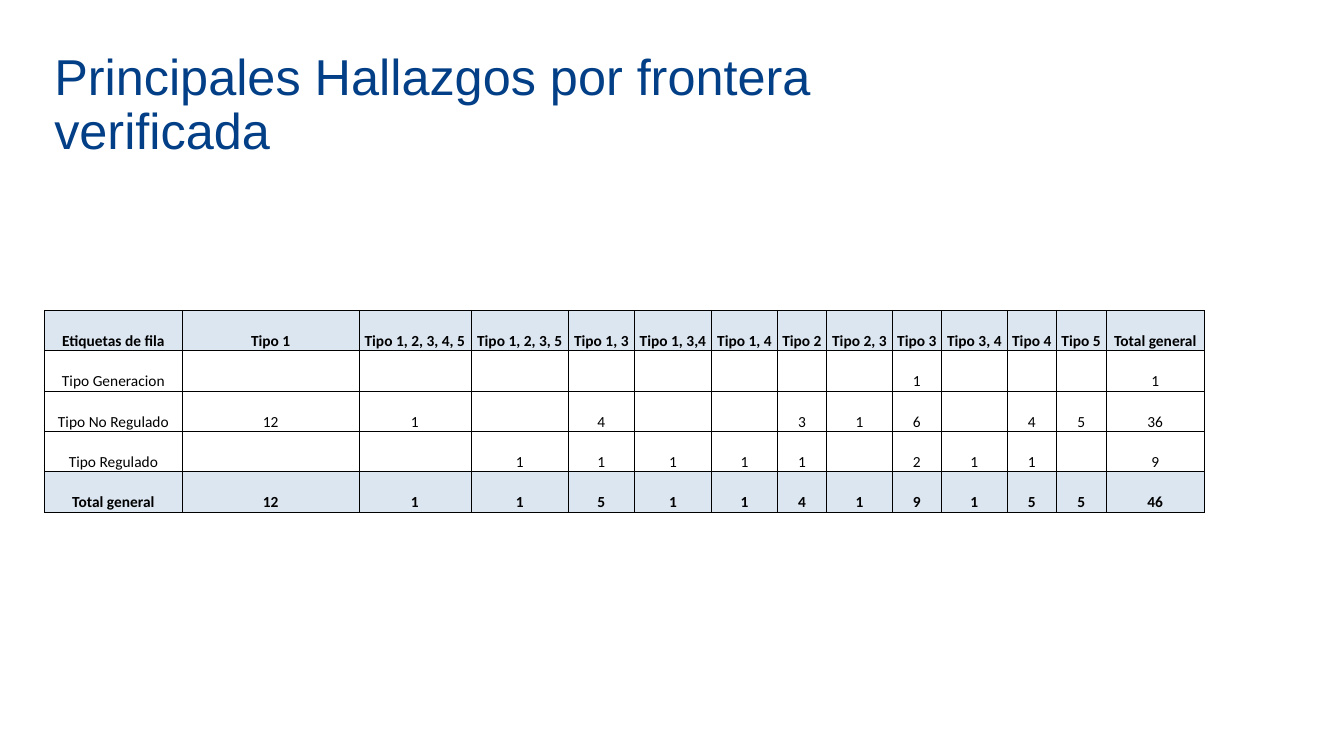
from dataclasses import dataclass

from lxml.etree import SubElement
from pptx import Presentation
from pptx.dml.color import RGBColor
from pptx.enum.text import MSO_ANCHOR, PP_ALIGN
from pptx.oxml.ns import qn
from pptx.util import Emu, Pt

EMU_PER_PX = 9144  # 100 px to the inch
ROW_HEIGHT = 40
BLACK, TITLE_BLUE, BAND_BLUE = "000000", "023F86", "DCE6F1"


@dataclass
class Column:
    heading: str
    width: int
    generation: int = 0
    unregulated: int = 0
    regulated: int = 0

    def texts(self) -> list[str]:
        """Heading, the three counts (blank when zero) and their sum."""
        counts = [self.generation, self.unregulated, self.regulated]
        return [self.heading, *(str(n) if n else "" for n in counts), str(sum(counts))]


LABEL_WIDTH = 137
LABELS = ["Etiquetas de fila", "Tipo Generacion", "Tipo No Regulado",
          "Tipo Regulado", "Total general"]
COLUMNS = [
    Column("Tipo 1", 175, unregulated=12),
    Column("Tipo 1, 2, 3, 4, 5", 111, unregulated=1),
    Column("Tipo 1, 2, 3, 5", 97, regulated=1),
    Column("Tipo 1, 3", 65, unregulated=4, regulated=1),
    Column("Tipo 1, 3,4", 77, regulated=1),
    Column("Tipo 1, 4", 65, regulated=1),
    Column("Tipo 2", 49, unregulated=3, regulated=1),
    Column("Tipo 2, 3", 65, unregulated=1),
    Column("Tipo 3", 49, generation=1, unregulated=6, regulated=2),
    Column("Tipo 3, 4", 65, regulated=1),
    Column("Tipo 4", 49, unregulated=4, regulated=1),
    Column("Tipo 5", 49, unregulated=5),
    Column("Total general", 98, generation=1, unregulated=36, regulated=9),
]


def px(length: int) -> Emu:
    return Emu(length * EMU_PER_PX)


def color(value: str) -> RGBColor:
    return RGBColor.from_string(value)


def write(frame, text: str, *, font: str, size: int, ink: str, bold: bool = False,
          align=PP_ALIGN.LEFT, spacing: float = 1.0) -> None:
    paragraph = frame.paragraphs[0]
    paragraph.alignment = align
    paragraph.line_spacing = spacing
    span = paragraph.add_run()
    span.text = text
    span.font.name = font
    span.font.size = Pt(size)
    span.font.bold = bold
    span.font.color.rgb = color(ink)


def add_borders(cell, ink: str, points: float) -> None:
    properties = cell._tc.get_or_add_tcPr()
    for side in ("a:lnL", "a:lnR", "a:lnT", "a:lnB"):
        line = SubElement(properties, qn(side), w=str(Pt(points)))
        fill = SubElement(line, qn("a:solidFill"))
        SubElement(fill, qn("a:srgbClr"), val=ink)


def fill_cell(cell, text: str, banded: bool) -> None:
    cell.margin_left = cell.margin_right = cell.margin_top = cell.margin_bottom = 0
    cell.vertical_anchor = MSO_ANCHOR.BOTTOM
    add_borders(cell, BLACK, 0.5)
    if banded:
        cell.fill.solid()
        cell.fill.fore_color.rgb = color(BAND_BLUE)
    else:
        cell.fill.background()
    if text:
        write(cell.text_frame, text, font="Calibri", size=11, ink=BLACK,
              bold=banded, align=PP_ALIGN.CENTER)


def add_title(page) -> None:
    box = page.shapes.add_textbox(px(44), px(46), px(970), px(119))
    frame = box.text_frame
    frame.word_wrap = True
    frame.vertical_anchor = MSO_ANCHOR.MIDDLE
    write(frame, "Principales Hallazgos por frontera verificada",
          font="Arial", size=36, ink=TITLE_BLUE, spacing=0.9)


def add_findings_table(page) -> None:
    widths = [LABEL_WIDTH, *(column.width for column in COLUMNS)]
    contents = [LABELS, *(column.texts() for column in COLUMNS)]
    last_row = len(LABELS) - 1
    table = page.shapes.add_table(len(LABELS), len(widths), px(44), px(308),
                                  px(sum(widths)), px(ROW_HEIGHT * len(LABELS))).table
    table.first_row = table.horz_banding = False
    for row in table.rows:
        row.height = px(ROW_HEIGHT)
    for index, (width, texts) in enumerate(zip(widths, contents)):
        table.columns[index].width = px(width)
        for row, text in enumerate(texts):
            fill_cell(table.cell(row, index), text, banded=row in (0, last_row))


def main() -> None:
    deck = Presentation()
    deck.slide_width, deck.slide_height = px(1333), px(750)
    page = deck.slides.add_slide(deck.slide_layouts[6])
    add_title(page)
    add_findings_table(page)
    deck.save("out.pptx")


if __name__ == "__main__":
    main()
